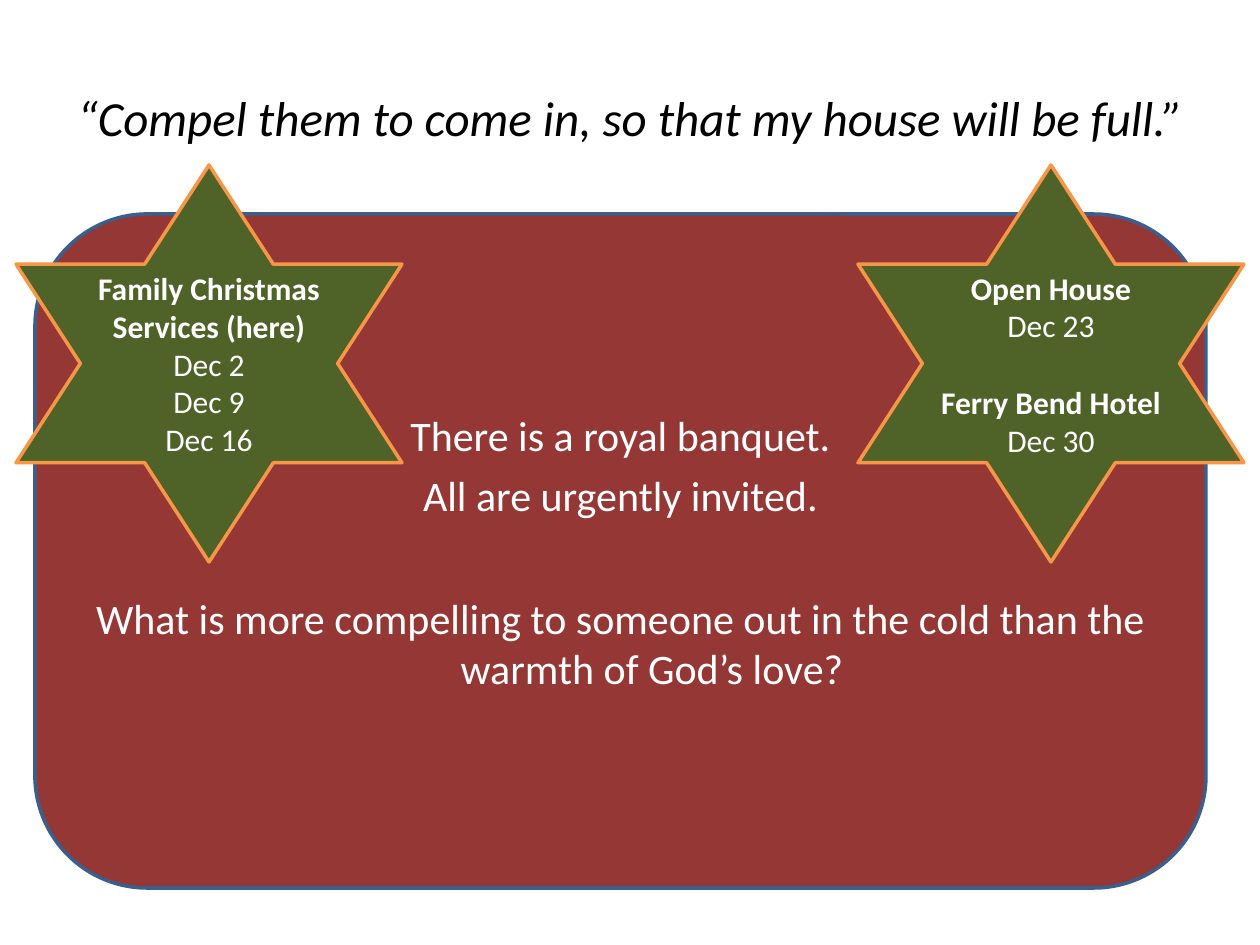
import dataclasses

import pptx
import pptx.dml.color
import pptx.enum.shapes
import pptx.enum.text
import pptx.util

PAGE_WIDTH, PAGE_HEIGHT = 1260, 945
PX_PER_INCH = 126


@dataclasses.dataclass(frozen=True)
class Theme:
    font: str = "Calibri"
    ink: str = "000000"
    light: str = "FFFFFF"
    panel: str = "953735"
    panel_line: str = "3A5F8C"
    star: str = "4F6228"
    star_line: str = "F79646"
    title_size: int = 28
    body_size: int = 24
    star_size: int = 18
    line_width: int = 2


@dataclasses.dataclass(frozen=True)
class Line:
    """One paragraph, with the space after it in points."""
    text: str
    bold: bool = False
    after: int = 0


def px(length):
    return pptx.util.Emu(round(length * 914400 / PX_PER_INCH))


def rgb(colour):
    return pptx.dml.color.RGBColor.from_string(colour)


class SlideBuilder:
    def __init__(self, page, theme):
        self.page = page
        self.theme = theme

    def set_text(self, box, lines, size, colour, italic=False, hanging=0):
        """Fill a box with centred lines; hanging is the indent in px."""
        frame = box.text_frame
        frame.word_wrap = True
        frame.vertical_anchor = pptx.enum.text.MSO_ANCHOR.MIDDLE
        for index, line in enumerate(lines):
            para = frame.add_paragraph() if index else frame.paragraphs[0]
            para.text = line.text
            para.alignment = pptx.enum.text.PP_ALIGN.CENTER
            para.space_after = pptx.util.Pt(line.after)
            para.font.name = self.theme.font
            para.font.size = pptx.util.Pt(size)
            para.font.bold = line.bold
            para.font.italic = italic
            para.font.color.rgb = rgb(colour)
            if hanging:
                properties = para._p.get_or_add_pPr()
                properties.set("marL", str(px(hanging)))
                properties.set("indent", str(-px(hanging)))

    def shape(self, kind, bounds, fill, line):
        shape = self.page.shapes.add_shape(kind, *map(px, bounds))
        shape.shadow.inherit = False
        shape.fill.solid()
        shape.fill.fore_color.rgb = rgb(fill)
        shape.line.color.rgb = rgb(line)
        shape.line.width = pptx.util.Pt(self.theme.line_width)
        return shape

    def title(self, bounds, text):
        box = self.page.shapes.add_textbox(*map(px, bounds))
        self.set_text(box, [Line(text)], self.theme.title_size, self.theme.ink, italic=True)

    def panel(self, bounds, lines):
        box = self.shape(pptx.enum.shapes.MSO_SHAPE.ROUNDED_RECTANGLE, bounds,
                         self.theme.panel, self.theme.panel_line)
        self.set_text(box, lines, self.theme.body_size, self.theme.light, hanging=63)

    def star(self, bounds, lines):
        box = self.shape(pptx.enum.shapes.MSO_SHAPE.STAR_6_POINT, bounds,
                         self.theme.star, self.theme.star_line)
        self.set_text(box, lines, self.theme.star_size, self.theme.light)


def main():
    deck = pptx.Presentation()
    deck.slide_width, deck.slide_height = px(PAGE_WIDTH), px(PAGE_HEIGHT)
    builder = SlideBuilder(deck.slides.add_slide(deck.slide_layouts[6]), Theme())

    builder.title((63, 38, 1134, 158),
                  "“Compel them to come in, so that my house will be full.”")
    builder.panel((35, 214, 1171, 674), [
        Line("There is a royal banquet.", after=6),
        Line("All are urgently invited.", after=41),
        Line("What is more compelling to someone out in the cold than the "
             "warmth of God’s love?", after=6),
    ])

    margin, top, width, height = 16, 165, 386, 397
    builder.star((margin, top, width, height), [
        Line("Family Christmas Services (here)", bold=True),
        Line("Dec 2"),
        Line("Dec 9"),
        Line("Dec 16"),
    ])
    builder.star((PAGE_WIDTH - margin - width, top, width, height), [
        Line("Open House", bold=True),
        Line("Dec 23", after=22),
        Line("Ferry Bend Hotel", bold=True),
        Line("Dec 30"),
    ])
    deck.save("out.pptx")


if __name__ == "__main__":
    main()
